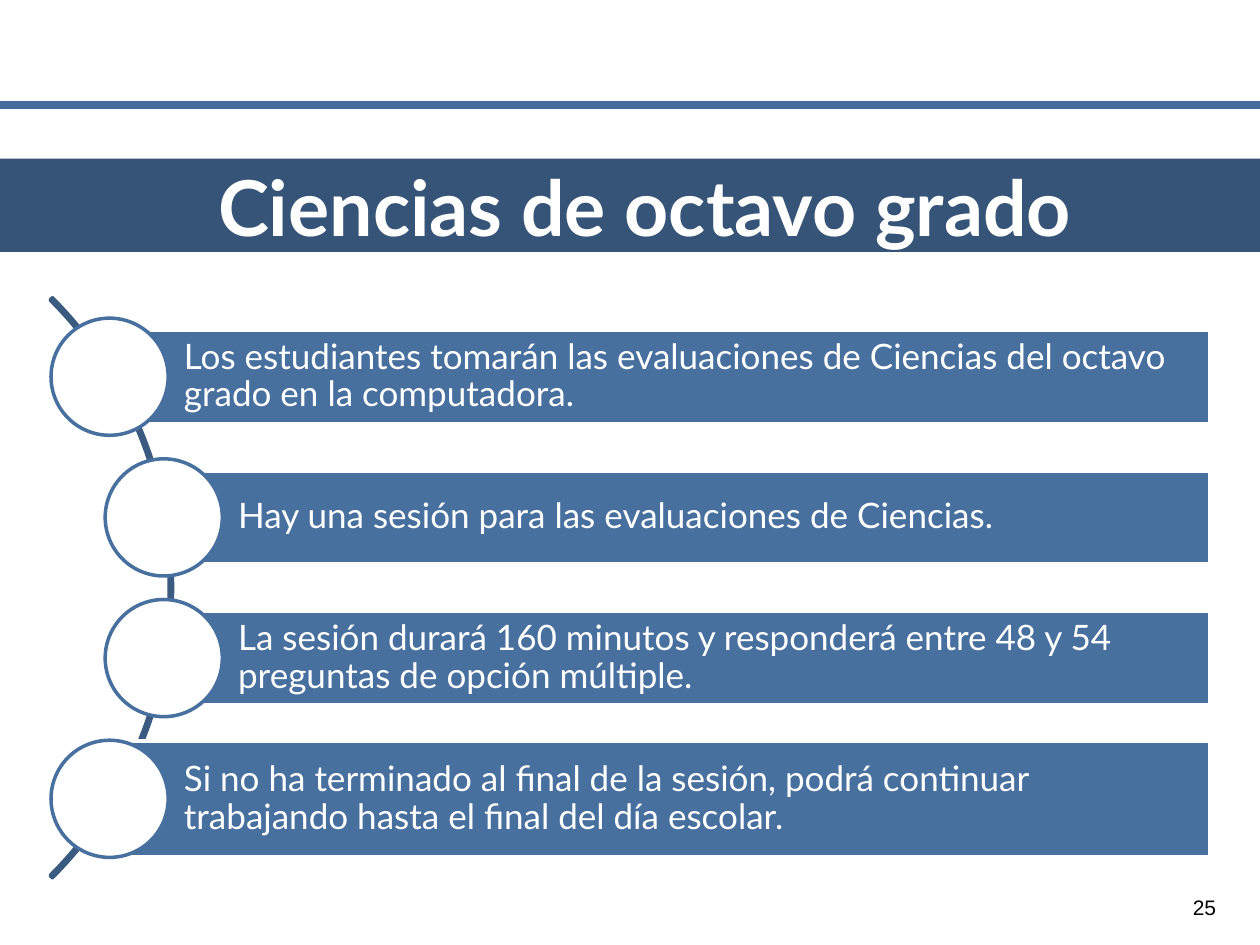
import pptx
import pptx.dml.color
import pptx.enum.shapes
import pptx.enum.text
import pptx.oxml.ns
import pptx.util
from lxml import etree

Inches = pptx.util.Inches
Pt = pptx.util.Pt
RGBColor = pptx.dml.color.RGBColor
MSO_SHAPE = pptx.enum.shapes.MSO_SHAPE
MSO_ANCHOR = pptx.enum.text.MSO_ANCHOR
PP_ALIGN = pptx.enum.text.PP_ALIGN

WHITE = RGBColor(0xFF, 0xFF, 0xFF)
BLACK = RGBColor(0, 0, 0)
RULE_BLUE = RGBColor(0x44, 0x6D, 0x9E)
BAR_BLUE = RGBColor(0x48, 0x70, 0x9F)
ARC_BLUE = RGBColor(0x3A, 0x5A, 0x7F)
TITLE_BLUE = RGBColor(0x36, 0x54, 0x77)

CIRCLE_SIZE = 0.93
BAR_RIGHT = 9.6
FIRST_CENTER = 2.99
LAST_CENTER = 6.34

# Text, horizontal centre of the circle, bar height
ROWS = [
    ("Los estudiantes tomarán las evaluaciones de Ciencias del octavo grado en la computadora.", 0.87, 0.74),
    ("Hay una sesión para las evaluaciones de Ciencias.", 1.3, 0.74),
    ("La sesión durará 160 minutos y responderá entre 48 y 54 preguntas de opción múltiple.", 1.3, 0.74),
    ("Si no ha terminado al final de la sesión, podrá continuar trabajando hasta el final del día escolar.", 0.87, 0.92),
]
ROW_PITCH = (LAST_CENTER - FIRST_CENTER) / (len(ROWS) - 1)


class SlideBuilder:
    """Holds the text style and the current slide."""

    font_name = "Lato"

    def __init__(self, slide):
        self.slide = slide

    def set_text(self, shape, text, size, color, align, margins, font=None, bold=False):
        frame = shape.text_frame
        frame.text = text
        frame.word_wrap = True
        frame.auto_size = pptx.enum.text.MSO_AUTO_SIZE.NONE
        frame.vertical_anchor = MSO_ANCHOR.MIDDLE
        frame.margin_left, frame.margin_top, frame.margin_right, frame.margin_bottom = map(Inches, margins)
        paragraph = frame.paragraphs[0]
        paragraph.alignment = align
        run_font = paragraph.runs[0].font
        run_font.name = font or self.font_name
        run_font.size = Pt(size)
        run_font.bold = bold
        run_font.color.rgb = color
        return paragraph

    def shape(self, kind, left, top, width, height, line, fill=None):
        shape = self.slide.shapes.add_shape(kind, Inches(left), Inches(top), Inches(width), Inches(height))
        shape.shadow.inherit = False
        if fill is None:
            shape.fill.background()
        else:
            shape.fill.solid()
            shape.fill.fore_color.rgb = fill
        shape.line.color.rgb = line
        shape.line.width = Pt(2)
        return shape

    def rule(self, top, color, width):
        connector = self.slide.shapes.add_connector(
            pptx.enum.shapes.MSO_CONNECTOR.STRAIGHT, 0, Inches(top), Inches(10), Inches(top))
        connector.line.color.rgb = color
        connector.line.width = Pt(width)
        etree.SubElement(connector._element.spPr, pptx.oxml.ns.qn("a:effectLst"))

    def arc(self):
        arc = self.shape(MSO_SHAPE.BLOCK_ARC, -5.14, 1.41, 6.51, 6.51, ARC_BLUE)
        # Start angle, end angle and a thin band
        for index, value in enumerate((189, 27, 0.004)):
            arc.adjustments[index] = value

    def row(self, text, center_x, center_y, height):
        bar = self.shape(MSO_SHAPE.RECTANGLE, center_x, center_y - height / 2,
                         BAR_RIGHT - center_x, height, WHITE, BAR_BLUE)
        paragraph = self.set_text(bar, text, 20, WHITE, PP_ALIGN.LEFT, (0.59, 0.06, 0.06, 0.06))
        paragraph.line_spacing = 0.9
        radius = CIRCLE_SIZE / 2
        self.shape(MSO_SHAPE.OVAL, center_x - radius, center_y - radius,
                   CIRCLE_SIZE, CIRCLE_SIZE, BAR_BLUE, WHITE)

    def title(self, text):
        title = self.slide.shapes.title
        title.left, title.top, title.width, title.height = map(Inches, (-0.01, 1.26, 10.01, 0.74))
        title.fill.solid()
        title.fill.fore_color.rgb = TITLE_BLUE
        paragraph = self.set_text(title, text, 44, WHITE, PP_ALIGN.CENTER, (0, 0, 0, 0), bold=True)
        paragraph._p.get_or_add_pPr().set("marL", str(Inches(0.25)))

    def page_number(self, text):
        box = self.slide.shapes.add_textbox(Inches(9.33), Inches(7), Inches(0.46), Inches(0.4))
        self.set_text(box, text, 12, BLACK, PP_ALIGN.CENTER, (0.1, 0.05, 0.1, 0.05), font="Arial")


def main():
    presentation = pptx.Presentation()
    presentation.slide_width = Inches(10)
    presentation.slide_height = Inches(7.5)
    title_only = presentation.slide_layouts[5]
    builder = SlideBuilder(presentation.slides.add_slide(title_only))

    # Header
    builder.rule(0.83, RULE_BLUE, 4.5)
    builder.title("Ciencias de octavo grado")

    # Curved list
    builder.arc()
    for index, (text, center_x, height) in enumerate(ROWS):
        builder.row(text, center_x, FIRST_CENTER + index * ROW_PITCH, height)

    # Footer
    builder.page_number("25")
    presentation.save("out.pptx")


if __name__ == "__main__":
    main()
